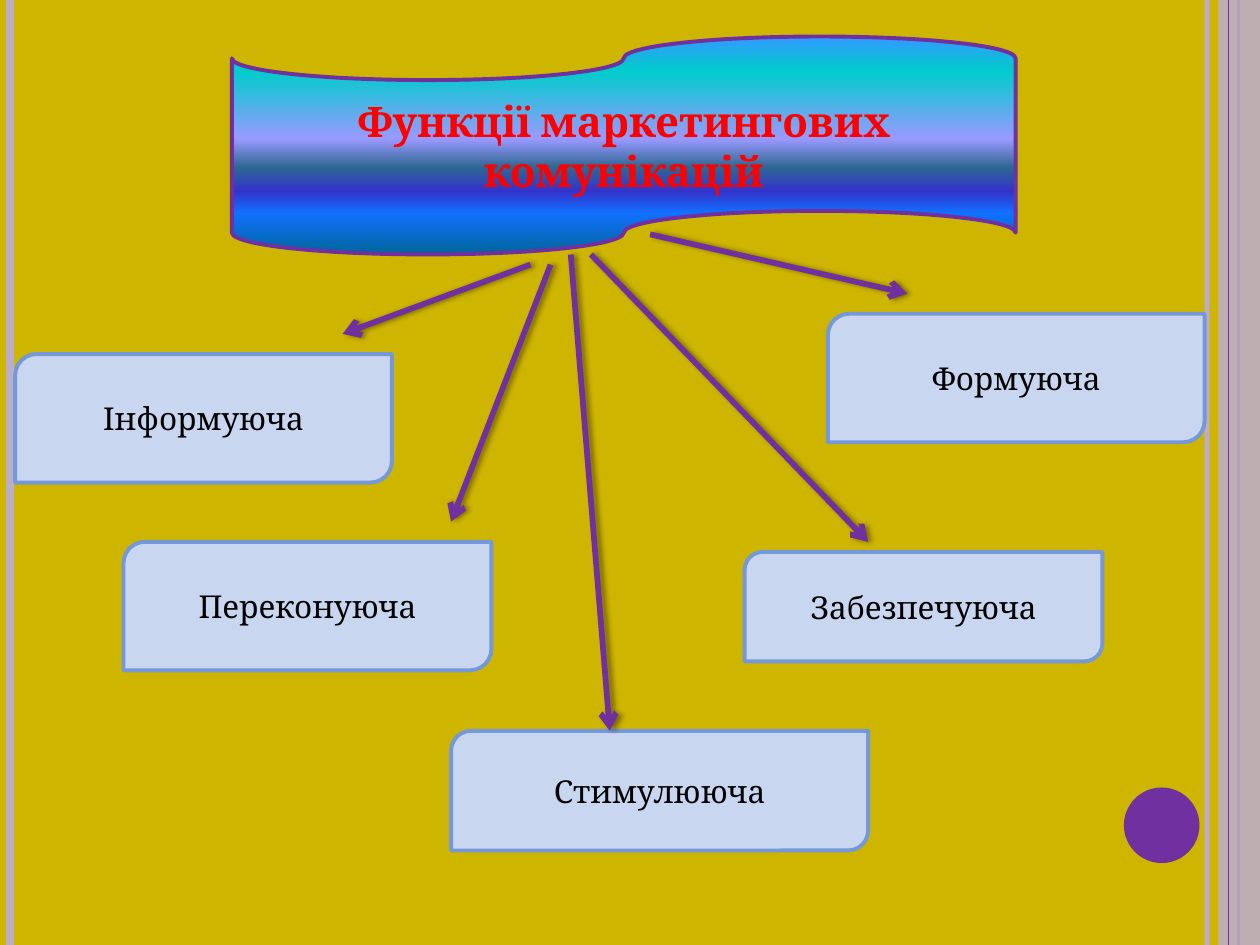
from lxml import etree
from pptx import Presentation
from pptx.dml.color import RGBColor
from pptx.enum.shapes import MSO_CONNECTOR, MSO_SHAPE
from pptx.enum.text import MSO_ANCHOR, PP_ALIGN
from pptx.oxml import parse_xml
from pptx.oxml.ns import nsdecls, qn
from pptx.util import Inches, Pt

STRAIGHT = MSO_CONNECTOR.STRAIGHT
RECT, OVAL = MSO_SHAPE.RECTANGLE, MSO_SHAPE.OVAL
TAPE = MSO_SHAPE.FLOWCHART_PUNCHED_TAPE
CARD = MSO_SHAPE.ROUND_2_DIAG_RECTANGLE
MIDDLE, CENTER = MSO_ANCHOR.MIDDLE, PP_ALIGN.CENTER

FONT = "Cambria"
COLORS = {
    "back": "CEB500", "lilac": "BBAECD", "purple": "7030A0",
    "card": "C8D6F0", "edge": "7598D9", "title": "FF0000", "text": "000000",
}
HEX = {name: RGBColor.from_string(code) for name, code in COLORS.items()}

prs = Presentation()
prs.slide_width, prs.slide_height = Inches(10), Inches(7.5)
slide = prs.slides.add_slide(prs.slide_layouts[6])
slide.background.fill.solid()
slide.background.fill.fore_color.rgb = HEX["back"]


def add_line(x1, y1, x2, y2, color, width):
    line = slide.shapes.add_connector(
        STRAIGHT, Inches(x1), Inches(y1), Inches(x2), Inches(y2))
    line.line.color.rgb = HEX[color]
    line.line.width = Pt(width)
    effect = etree.SubElement(line._element.spPr, qn("a:effectLst"))
    return line, effect


def add_box(kind, box, fill, edge=None, text="", size=18, color="text", bold=False):
    shape = slide.shapes.add_shape(kind, *[Inches(v) for v in box])
    shape.shadow.inherit = False
    if fill:
        shape.fill.solid()
        shape.fill.fore_color.rgb = HEX[fill]
    if edge:
        shape.line.color.rgb = HEX[edge]
        shape.line.width = Pt(2.25)
    else:
        shape.line.fill.background()
    if text:
        frame = shape.text_frame
        frame.word_wrap = True
        frame.vertical_anchor = MIDDLE
        para = frame.paragraphs[0]
        para.alignment = CENTER
        run = para.add_run()
        run.text = text
        run.font.name, run.font.size, run.font.bold = FONT, Pt(size), bold
        run.font.color.rgb = HEX[color]
    return shape


# Side stripes and corner dot
stripe, _ = add_line(9.58, 0, 9.58, 7.5, "lilac", 3)
add_line(0.08, 0, 0.08, 7.5, "lilac", 4.5)
add_line(9.83, 0, 9.83, 7.5, "purple", 1.5)
band = add_box(RECT, (9.67, 0, 0.33, 7.5), "lilac")
add_line(9.75, 0, 9.75, 7.5, "purple", 0.75)
add_box(OVAL, (8.92, 6.25, 0.6, 0.6), "purple")

for part, alpha in ((stripe, 93), (band, 87)):
    tint = next(part._element.spPr.iter(qn("a:srgbClr")))
    etree.SubElement(tint, qn("a:alpha")).set("val", str(alpha * 1000))

# Title banner with a rainbow gradient
banner = add_box(TAPE, (1.84, 0.29, 6.22, 1.73), None, "purple",
                 "Функції маркетингових комунікацій", 24, "title", True)
banner.fill.gradient()
banner.fill.gradient_angle = 270
stops = next(banner._element.spPr.iter(qn("a:gsLst")))
for stop in list(stops):
    stops.remove(stop)
for place, code in ((0, "3399FF"), (16, "00CCCC"), (47, "9999FF"), (60, "2E6792"),
                    (71, "3333CC"), (81, "1170FF"), (100, "006699")):
    stop = etree.SubElement(stops, qn("a:gs"), pos=str(place * 1000))
    etree.SubElement(stop, qn("a:srgbClr"), val=code)

# Function cards
for text, box in (
    ("Інформуюча", (0.12, 2.81, 2.99, 1.02)),
    ("Переконуюча", (0.98, 4.3, 2.92, 1.02)),
    ("Формуюча", (6.57, 2.49, 2.99, 1.02)),
    ("Стимулююча", (3.58, 5.8, 3.31, 0.95)),
    ("Забезпечуюча", (5.91, 4.38, 2.84, 0.87)),
):
    add_box(CARD, box, "card", "edge", text)

# Arrows from the banner to the cards
for ends in (
    (5.16, 1.86, 7.2, 2.33),
    (4.69, 2.02, 6.89, 4.3),
    (4.53, 2.02, 4.84, 5.8),
    (4.37, 2.1, 3.58, 4.14),
    (4.21, 2.1, 2.72, 2.65),
):
    arrow, effect = add_line(*ends, "purple", 3.25)
    etree.SubElement(arrow.line._get_or_add_ln(), qn("a:tailEnd"), type="arrow")
    effect.append(parse_xml(
        f'<a:outerShdw {nsdecls("a")} blurRad="{Pt(3.1)}" dist="{Pt(1.8)}" dir="0">'
        '<a:srgbClr val="000000"><a:alpha val="40000"/></a:srgbClr></a:outerShdw>'))

prs.save("out.pptx")
